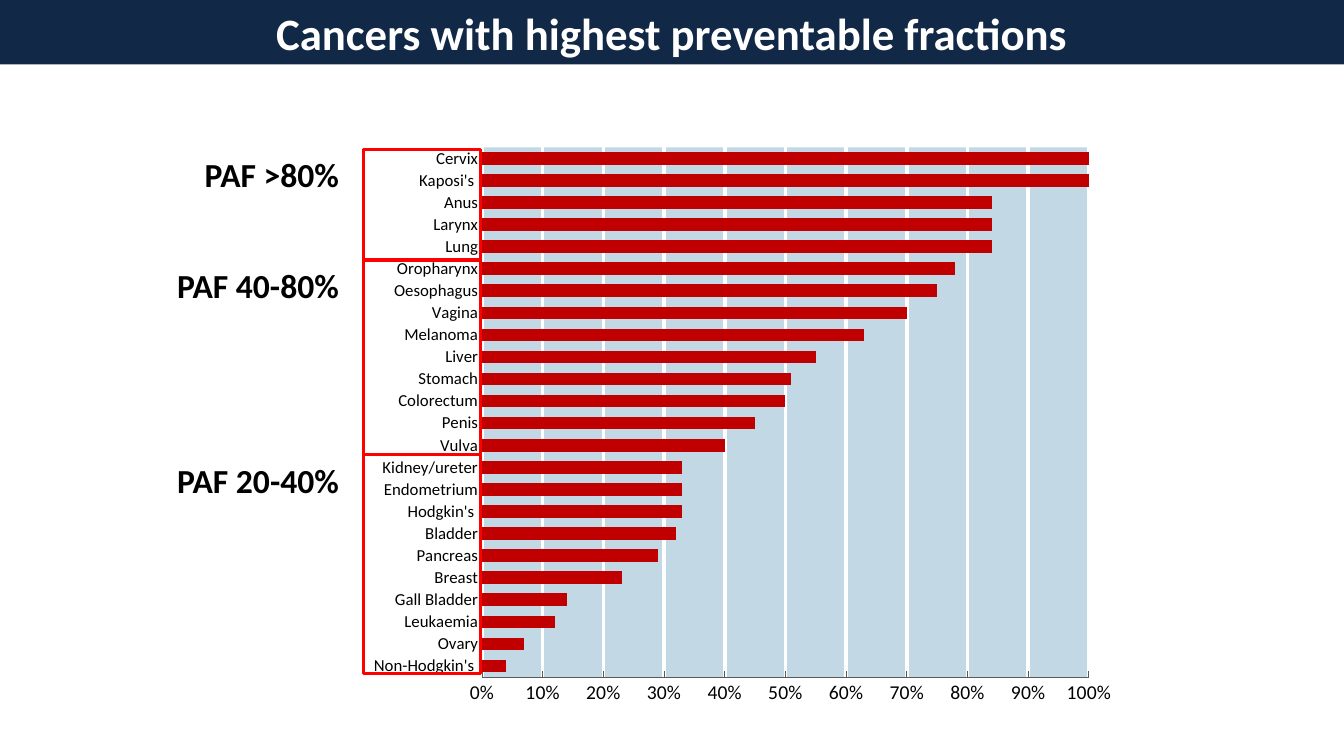
import dataclasses

import pptx
import pptx.chart.data
import pptx.dml.color
import pptx.enum.chart
import pptx.enum.shapes
import pptx.enum.text
import pptx.oxml
import pptx.oxml.ns
import pptx.util

Inches = pptx.util.Inches
Pt = pptx.util.Pt
FONT = "Calibri"


@dataclasses.dataclass
class Band:
    label: str
    left: float
    height: float


@dataclasses.dataclass
class Cancer:
    name: str
    share: float


BANDS = [
    Band("PAF >80%", 1.81, 1.1),
    Band("PAF 40-80%", 1.5, 1.93),
    Band("PAF 20-40%", 1.48, 2.17),
]

CANCERS = [
    Cancer("Cervix", 1), Cancer("Kaposi's ", 1), Cancer("Anus", 0.84),
    Cancer("Larynx", 0.84), Cancer("Lung", 0.84), Cancer("Oropharynx", 0.78),
    Cancer("Oesophagus", 0.75), Cancer("Vagina", 0.7), Cancer("Melanoma", 0.63),
    Cancer("Liver", 0.55), Cancer("Stomach", 0.51), Cancer("Colorectum", 0.5),
    Cancer("Penis", 0.45), Cancer("Vulva", 0.4), Cancer("Kidney/ureter", 0.33),
    Cancer("Endometrium", 0.33), Cancer("Hodgkin's ", 0.33), Cancer("Bladder", 0.32),
    Cancer("Pancreas", 0.29), Cancer("Breast", 0.23), Cancer("Gall Bladder", 0.14),
    Cancer("Leukaemia", 0.12), Cancer("Ovary", 0.07), Cancer("Non-Hodgkin's ", 0.04),
]


def paint(color, code: str) -> None:
    color.rgb = pptx.dml.color.RGBColor.from_string(code)


def fill_with(fill, code: str) -> None:
    fill.solid()
    paint(fill.fore_color, code)


def style(font, size: float, code: str, bold: bool = False) -> None:
    font.name = FONT
    font.size = Pt(size)
    font.bold = bold
    paint(font.color, code)


def write(frame, text: str, size: float, code: str, align) -> None:
    frame.word_wrap = True
    para = frame.paragraphs[0]
    para.alignment = align
    run = para.add_run()
    run.text = text
    style(run.font, size, code, bold=True)


def back(code: str, alpha: int = 100):
    return pptx.oxml.parse_xml(
        f'<c:spPr {pptx.oxml.ns.nsdecls("c", "a")}><a:solidFill><a:srgbClr val="{code}">'
        f'<a:alpha val="{alpha * 1000}"/></a:srgbClr></a:solidFill>'
        '<a:ln><a:noFill/></a:ln></c:spPr>'
    )


def place_plot(chart) -> None:
    space = chart.element
    space.find(pptx.oxml.ns.qn("c:chart")).addnext(back("FFFFFF", 80))
    plot = space.find(".//" + pptx.oxml.ns.qn("c:plotArea"))
    for old in plot.findall(pptx.oxml.ns.qn("c:layout")):
        plot.remove(old)
    parts = "".join(
        f'<c:{key} val="{val}"/>'
        for key, val in [("layoutTarget", "inner"), ("xMode", "edge"), ("yMode", "edge"),
                         ("x", 0.16), ("y", 0.021), ("w", 0.789), ("h", 0.911)]
    )
    plot.insert(0, pptx.oxml.parse_xml(
        f'<c:layout {pptx.oxml.ns.nsdecls("c")}>'
        f'<c:manualLayout>{parts}</c:manualLayout></c:layout>'
    ))
    plot.append(back("C3D8E5"))


def draw_chart(slide) -> None:
    data = pptx.chart.data.CategoryChartData(number_format="0%")
    rows = CANCERS[::-1]
    data.categories = [row.name for row in rows]
    data.add_series("Series 1", [row.share for row in rows])
    chart = slide.shapes.add_chart(
        pptx.enum.chart.XL_CHART_TYPE.BAR_STACKED,
        Inches(3.56), Inches(1.34), Inches(7.63), Inches(5.77), data,
    ).chart
    chart.has_legend = False
    chart.has_title = False
    style(chart.font, 10, "000000")

    plot = chart.plots[0]
    plot.gap_width = 75
    plot.overlap = 100
    plot.vary_by_categories = False
    fill_with(plot.series[0].format.fill, "C00000")

    marks = pptx.enum.chart.XL_TICK_MARK
    names = chart.category_axis
    names.major_tick_mark = marks.NONE
    names.minor_tick_mark = marks.NONE
    names.format.line.fill.background()
    style(names.tick_labels.font, 12, "000000")

    scale = chart.value_axis
    scale.minimum_scale = 0
    scale.maximum_scale = 1
    scale.major_unit = 0.1
    scale.major_tick_mark = marks.INSIDE
    scale.minor_tick_mark = marks.NONE
    scale.tick_labels.number_format = "0%"
    scale.tick_labels.number_format_is_linked = False
    style(scale.tick_labels.font, 14, "000000")
    scale.has_major_gridlines = True
    for line, code, width in [(scale.format.line, "595959", 0.75),
                              (scale.major_gridlines.format.line, "FFFFFF", 2.5)]:
        paint(line.color, code)
        line.width = Pt(width)
    place_plot(chart)


def draw_band(slide, band: Band, top: float) -> None:
    group = slide.shapes.add_group_shape()
    frame = group.shapes.add_shape(
        pptx.enum.shapes.MSO_SHAPE.RECTANGLE,
        Inches(3.61), Inches(top), Inches(1.16), Inches(band.height),
    )
    frame.shadow.inherit = False
    frame.fill.background()
    paint(frame.line.color, "FF0000")
    frame.line.width = Pt(2.25)
    label = group.shapes.add_textbox(
        Inches(band.left), Inches(top), Inches(3.46 - band.left), Inches(0.5)
    )
    write(label.text_frame, band.label, 24, "000000", pptx.enum.text.PP_ALIGN.RIGHT)


def draw_title(slide) -> None:
    title = slide.shapes.title
    title.left, title.top = Inches(0), Inches(0)
    title.width, title.height = Inches(13.33), Inches(0.64)
    fill_with(title.fill, "112946")
    frame = title.text_frame
    frame.auto_size = pptx.enum.text.MSO_AUTO_SIZE.NONE
    frame.vertical_anchor = pptx.enum.text.MSO_ANCHOR.MIDDLE
    write(frame, "Cancers with highest preventable fractions", 32, "FFFFFF",
          pptx.enum.text.PP_ALIGN.CENTER)


def main() -> None:
    deck = pptx.Presentation()
    deck.slide_width = Inches(13.33)
    deck.slide_height = Inches(7.5)
    slide = deck.slides.add_slide(deck.slide_layouts[5])
    draw_title(slide)
    draw_chart(slide)
    top = 1.48
    for band in BANDS:
        draw_band(slide, band, top)
        top += band.height
    deck.save("out.pptx")


if __name__ == "__main__":
    main()
